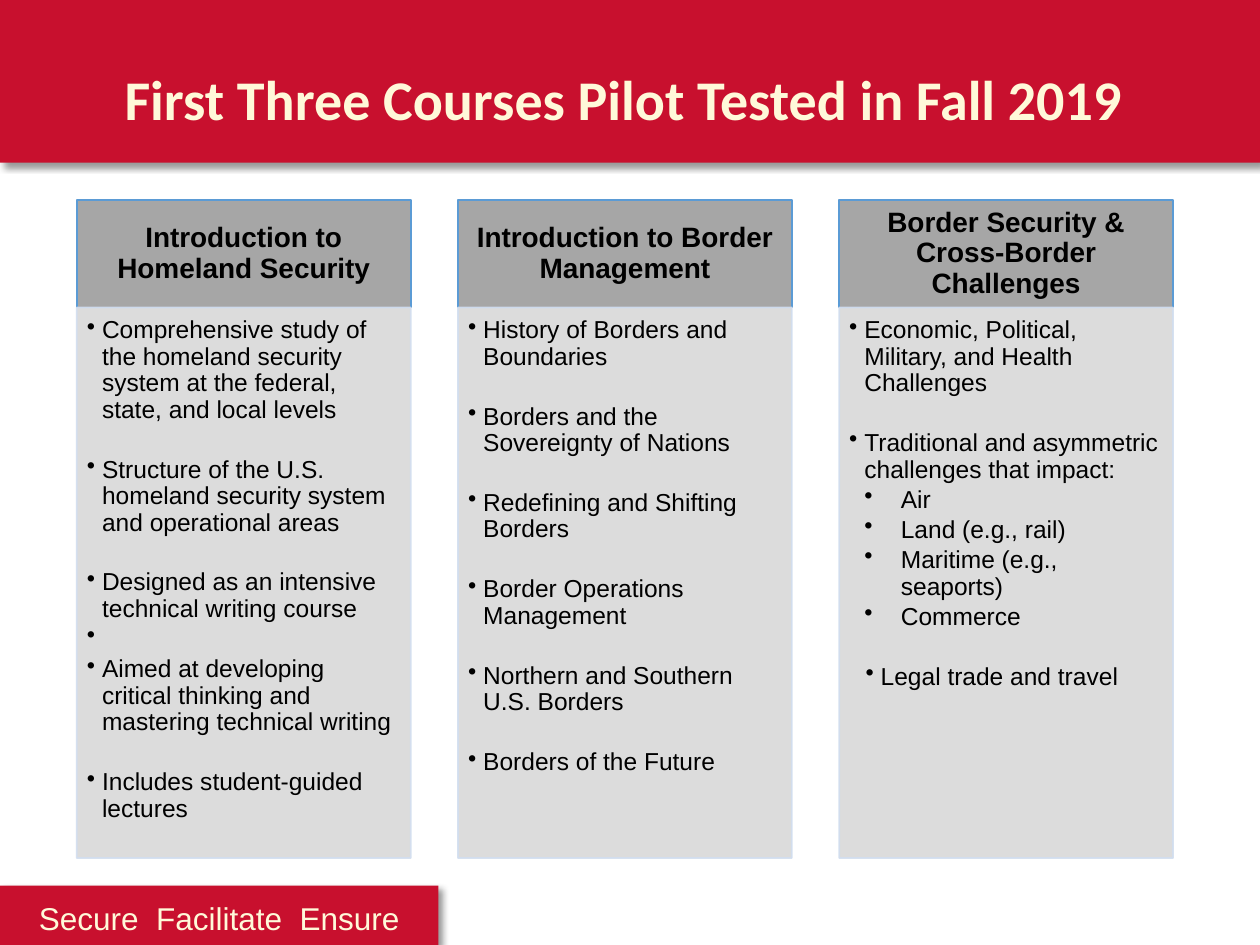
from lxml.etree import SubElement
from pptx import Presentation
from pptx.dml.color import RGBColor
from pptx.enum.shapes import MSO_SHAPE
from pptx.enum.text import MSO_ANCHOR, PP_ALIGN
from pptx.oxml.ns import qn
from pptx.util import Inches, Pt

TITLE = "First Three Courses Pilot Tested in Fall 2019 "
MOTTO = "Secure  Facilitate  Ensure"

COURSES = [
    ("Introduction to Homeland Security", [
        ("top", 0, "Comprehensive study of the homeland security system at the federal, state, and local levels"),
        ("top", 1, "Structure of the U.S. homeland security system and operational areas"),
        ("top", 1, "Designed as an intensive technical writing course"),
        ("top", 0, " "),
        ("top", 0, "Aimed at developing critical thinking and mastering technical writing"),
        ("top", 1, "Includes student-guided lectures"),
    ]),
    ("Introduction to Border Management", [
        ("top", 0, "History of Borders and Boundaries"),
        ("top", 1, "Borders and the Sovereignty of Nations"),
        ("top", 1, "Redefining and Shifting Borders"),
        ("top", 1, "Border Operations Management"),
        ("top", 1, "Northern and Southern U.S. Borders"),
        ("top", 1, "Borders of the Future"),
    ]),
    ("Border Security & Cross-Border Challenges", [
        ("top", 0, "Economic, Political, Military, and Health Challenges"),
        ("top", 1, "Traditional and asymmetric challenges that impact:"),
        ("wide", 0, "Air"),
        ("wide", 0, "Land (e.g., rail)"),
        ("wide", 0, "Maritime (e.g., seaports)"),
        ("wide", 0, "Commerce"),
        ("sub", 1, "Legal trade and travel"),
    ]),
]

THEME = {
    "red": "C8102E", "cream": "FFF9D9", "ink": "000000",
    "head": "A6A6A6", "edge": "5B9BD5", "panel": "D9D9D9", "rim": "D2DEEF",
    "sans": "Arial", "title font": "Calibri",
    "title": 32, "motto": 18, "course": 16, "point": 14,
}
INDENT = {"top": (0.12, -0.12), "sub": (0.25, -0.12), "wide": (0.41, -0.29)}

WIDE, HIGH = 10, 7.5
LEFT, RIGHT, COL = 0.61, 9.31, 2.65
ROWS = (1.59, 2.44, 6.81)
GAP = (RIGHT - LEFT - COL * len(COURSES)) / (len(COURSES) - 1)


def color(name):
    return RGBColor.from_string(THEME[name])


def fade(fill):
    tone = fill._xPr.find(".//" + qn("a:srgbClr"))
    SubElement(tone, qn("a:alpha"), val="90000")


def box(slide, area, fill, line=None, clear=False):
    shape = slide.shapes.add_shape(MSO_SHAPE.RECTANGLE, *map(Inches, area))
    shape.shadow.inherit = False
    shape.fill.solid()
    shape.fill.fore_color.rgb = color(fill)
    if line:
        shape.line.color.rgb = color(line)
        shape.line.width = Pt(1)
    else:
        shape.line.fill.background()
    if clear:
        fade(shape.fill)
        fade(shape.line.fill)
    return shape


def shade(shape):
    effects = shape._element.spPr.find(qn("a:effectLst"))
    cast = SubElement(effects, qn("a:outerShdw"), blurRad=str(Pt(4)),
                      dist=str(Pt(3)), dir="2700000", algn="tl", rotWithShape="0")
    tone = SubElement(cast, qn("a:srgbClr"), val=THEME["ink"])
    SubElement(tone, qn("a:alpha"), val="40000")


def setup(shape, inset, anchor):
    frame = shape.text_frame
    frame.word_wrap = True
    frame.vertical_anchor = anchor
    (frame.margin_left, frame.margin_top,
     frame.margin_right, frame.margin_bottom) = map(Inches, inset)
    return frame


def write(para, text, size, tone="ink", font="sans", bold=False,
          align=PP_ALIGN.CENTER, lines=0.9):
    para.alignment = align
    para.line_spacing = lines
    run = para.add_run()
    run.text = text
    run.font.name = THEME[font]
    run.font.size = Pt(THEME[size])
    run.font.bold = bold
    run.font.color.rgb = color(tone)


def bullet(para, level, gap):
    if gap:
        para.space_before = Pt(17)
    para.space_after = Pt(2.1)
    props = para._p.get_or_add_pPr()
    margin, hang = INDENT[level]
    props.set("marL", str(Inches(margin)))
    props.set("indent", str(Inches(hang)))
    SubElement(props, qn("a:buChar"), char="•")


def course(slide, left, name, points):
    top, mid, end = ROWS
    head = box(slide, (left, top, COL, mid - top), "head", "edge")
    frame = setup(head, (0.12, 0.07, 0.12, 0.07), MSO_ANCHOR.MIDDLE)
    write(frame.paragraphs[0], name, "course", bold=True)

    panel = box(slide, (left, mid, COL, end - mid), "panel", "rim", clear=True)
    frame = setup(panel, (0.08, 0.08, 0.11, 0.12), MSO_ANCHOR.TOP)
    for index, (level, gap, text) in enumerate(points):
        para = frame.add_paragraph() if index else frame.paragraphs[0]
        write(para, text, "point", align=PP_ALIGN.LEFT)
        bullet(para, level, gap)


def main():
    deck = Presentation()
    deck.slide_width, deck.slide_height = Inches(WIDE), Inches(HIGH)
    slide = deck.slides.add_slide(deck.slide_layouts[6])

    shade(box(slide, (0, 0, WIDE, 1.29), "red"))
    foot = box(slide, (0, 7.03, 3.48, HIGH - 7.03), "red")
    shade(foot)
    inset = (0.1, 0.05, 0.1, 0.05)
    frame = setup(foot, inset, MSO_ANCHOR.TOP)
    write(frame.paragraphs[0], MOTTO, "motto", "cream", lines=1.19)

    title = slide.shapes.add_textbox(*map(Inches, (0.69, 0.4, 8.62, 0.82)))
    frame = setup(title, inset, MSO_ANCHOR.MIDDLE)
    write(frame.paragraphs[0], TITLE, "title", "cream", "title font", True)

    for index, (name, points) in enumerate(COURSES):
        course(slide, LEFT + index * (COL + GAP), name, points)
    deck.save("out.pptx")


if __name__ == "__main__":
    main()
